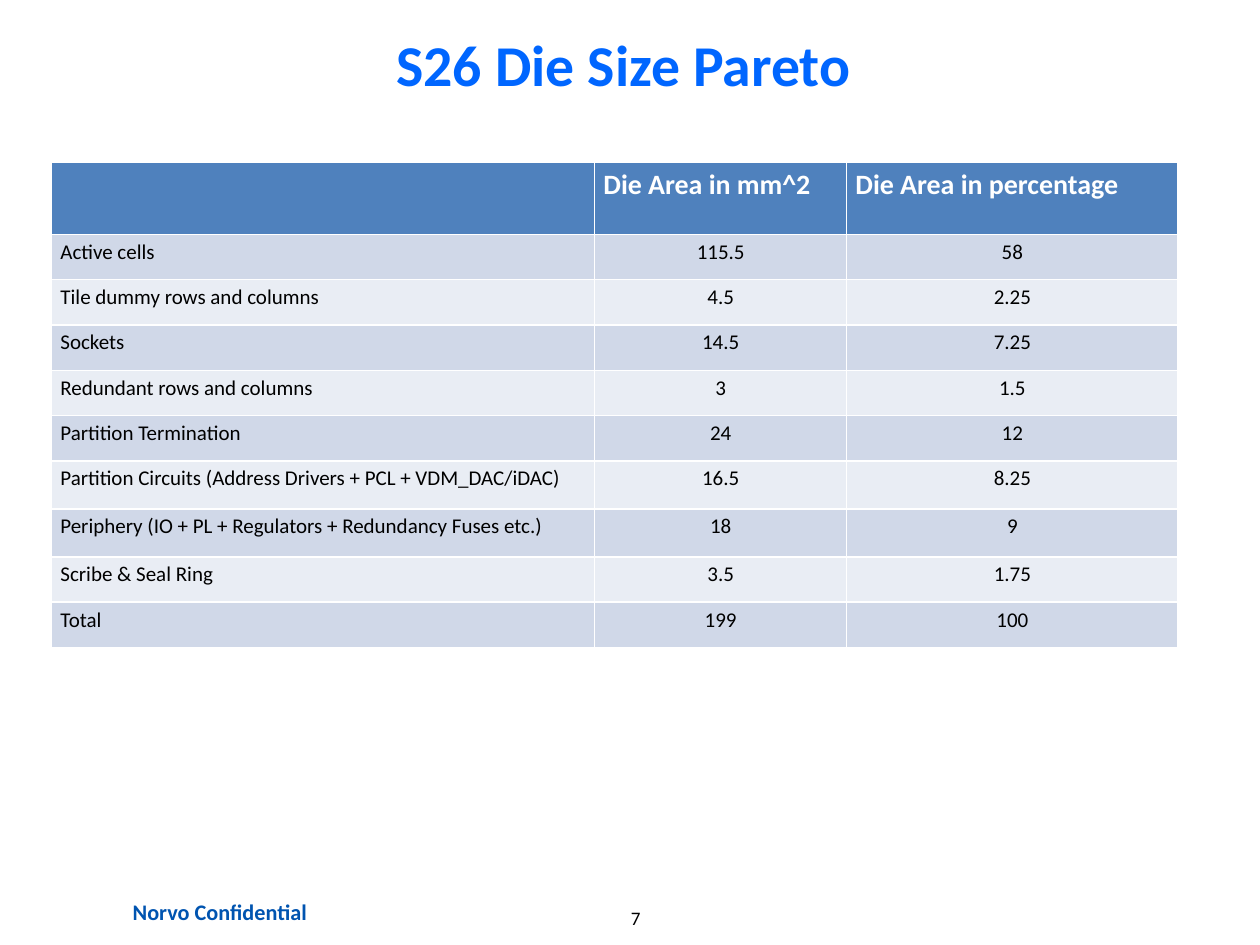
from dataclasses import dataclass

from pptx import Presentation
from pptx.dml.color import RGBColor as Color
from pptx.enum.text import MSO_ANCHOR as Anchor, PP_ALIGN as Align
from pptx.util import Inches, Pt


@dataclass(frozen=True)
class Theme:
    font: str = "Calibri"
    title: str = "0066FF"
    footer: str = "0054B0"
    text: str = "000000"
    header_text: str = "FFFFFF"
    header_fill: str = "4F81BD"
    bands: tuple = ("D0D8E8", "E9EDF4")
    title_size: float = 33
    header_size: float = 16
    body_size: float = 12
    footer_size: float = 12.7
    number_size: float = 10.9


theme = Theme()


def style_text(para, size, color, bold, align):
    para.alignment = align
    para.font.name = theme.font
    para.font.size = Pt(size)
    para.font.bold = bold
    para.font.color.rgb = Color.from_string(color)


def add_label(page, place, margins, text, size, color, bold, anchor):
    box = page.shapes.add_textbox(*[Inches(length) for length in place])
    frame = box.text_frame
    frame.word_wrap = True
    frame.vertical_anchor = anchor
    frame.margin_left = frame.margin_right = Inches(margins[0])
    frame.margin_top = frame.margin_bottom = Inches(margins[1])
    frame.text = text
    style_text(frame.paragraphs[0], size, color, bold, Align.CENTER)


deck = Presentation()
deck.slide_width, deck.slide_height = Inches(10), Inches(7.5)
page = deck.slides.add_slide(deck.slide_layouts[6])

add_label(page, (4.17, 7.19, 1.75, 0.18), (0, 0), "7",
          theme.number_size, theme.text, False, Anchor.TOP)
add_label(page, (0.91, 7.08, 1.67, 0.31), (0.09, 0.05), "Norvo Confidential",
          theme.footer_size, theme.footer, True, Anchor.TOP)
add_label(page, (0.7, 0.34, 8.5, 0.33), (0.1, 0.05), "S26 Die Size Pareto",
          theme.title_size, theme.title, True, Anchor.MIDDLE)

die_areas = [
    ("", "Die Area in mm^2", "Die Area in percentage"),
    ("Active cells", "115.5", "58"),
    ("Tile dummy rows and columns", "4.5", "2.25"),
    ("Sockets", "14.5", "7.25"),
    ("Redundant rows and columns", "3", "1.5"),
    ("Partition Termination", "24", "12"),
    ("Partition Circuits (Address Drivers + PCL + VDM_DAC/iDAC)", "16.5", "8.25"),
    ("Periphery (IO + PL + Regulators + Redundancy Fuses etc.)", "18", "9"),
    ("Scribe & Seal Ring", "3.5", "1.75"),
    ("Total", "199", "100"),
]
column_widths = [4.31, 2, 2.63]
row_heights = [0.57] + [0.36] * 5 + [0.38] * 2 + [0.36] * 2

table = page.shapes.add_table(
    len(die_areas), len(column_widths), Inches(0.41), Inches(1.29),
    Inches(sum(column_widths)), Inches(sum(row_heights))).table
for column, width in zip(table.columns, column_widths):
    column.width = Inches(width)

for row_index, values in enumerate(die_areas):
    table.rows[row_index].height = Inches(row_heights[row_index])
    is_header = row_index == 0
    fill = theme.header_fill if is_header else theme.bands[(row_index - 1) % 2]
    size = theme.header_size if is_header else theme.body_size
    color = theme.header_text if is_header else theme.text
    for column_index, value in enumerate(values):
        cell = table.cell(row_index, column_index)
        cell.fill.solid()
        cell.fill.fore_color.rgb = Color.from_string(fill)
        cell.margin_left = cell.margin_right = Inches(0.07)
        cell.margin_top = cell.margin_bottom = Inches(0.04)
        cell.text = value
        align = Align.LEFT if is_header or column_index == 0 else Align.CENTER
        style_text(cell.text_frame.paragraphs[0], size, color, is_header, align)

deck.save("out.pptx")
